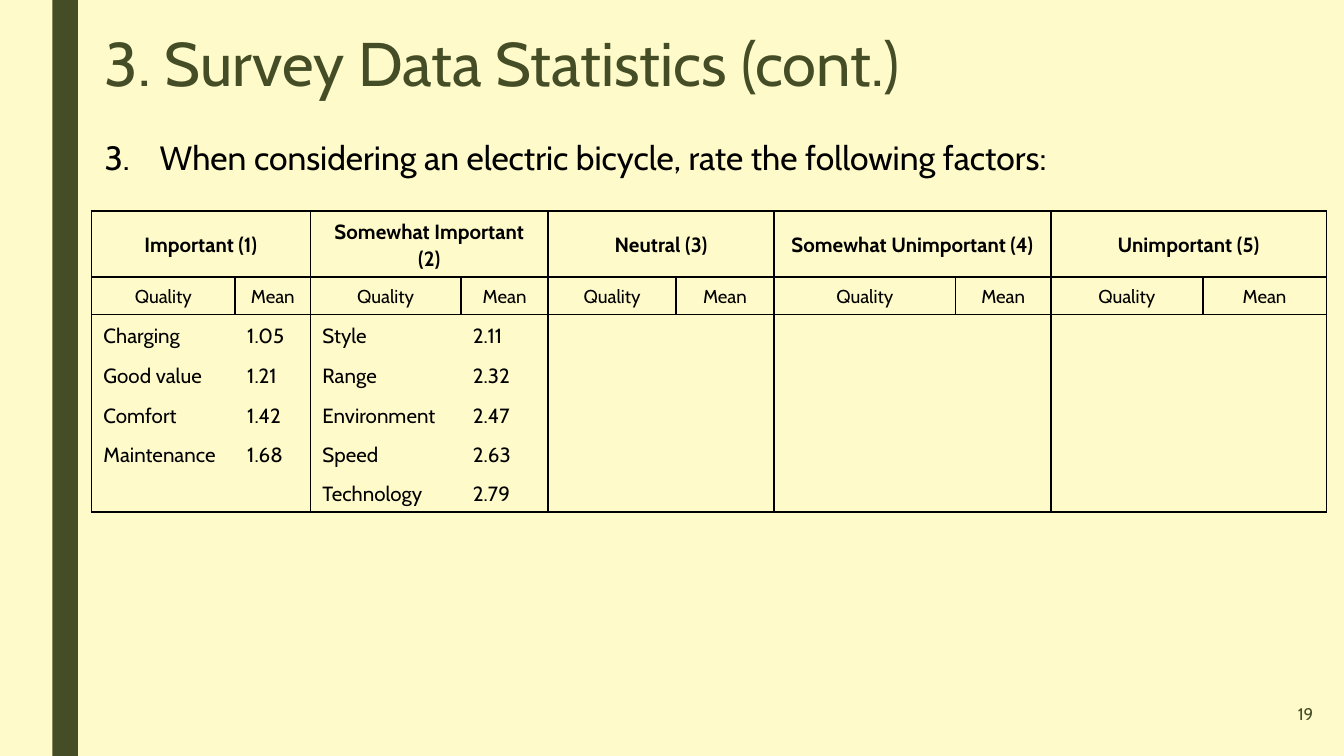
from lxml.etree import SubElement
from pptx import Presentation
from pptx.dml.color import RGBColor
from pptx.enum.shapes import MSO_SHAPE
from pptx.enum.text import MSO_ANCHOR, MSO_AUTO_SIZE, PP_ALIGN
from pptx.oxml import parse_xml
from pptx.oxml.ns import nsdecls, qn
from pptx.util import Inches, Pt

TITLE = "3. Survey Data Statistics (cont.)"
ASK = "3.\tWhen considering an electric bicycle, rate the following factors:"
PAGE = "19"
GROUPS = [
    ("Important (1)", [("Charging", "1.05"), ("Good value", "1.21"),
                       ("Comfort", "1.42"), ("Maintenance", "1.68")]),
    ("Somewhat Important (2)", [("Style", "2.11"), ("Range", "2.32"),
                                ("Environment", "2.47"), ("Speed", "2.63"),
                                ("Technology", "2.79")]),
    ("Neutral (3)", []),
    ("Somewhat Unimportant (4)", []),
    ("Unimportant (5)", []),
]
HEADS = ("Quality", "Mean")
COLS = [1.07, 0.56, 1.12, 0.65, 0.95, 0.73, 1.35, 0.71, 1.13, 0.92]
ROWS = [0.49, 0.27, 0.3, 0.3, 0.29, 0.29, 0.29]

FONT = "Cabin"
CREAM = RGBColor(0xFE, 0xFA, 0xC9)
GREEN = RGBColor(0x44, 0x4D, 0x26)
BLACK = RGBColor(0, 0, 0)
PLAIN = "{2D5ABB26-0587-4C30-8999-92F81FD0307C}"
WIDE = Inches(10)
HIGH = WIDE * 9 // 16


def write(frame, text, size, color=BLACK, bold=False, align=PP_ALIGN.LEFT,
          space=None, after=None):
    para = frame.paragraphs[0]
    para.alignment = align
    para.line_spacing = space
    para.space_after = after
    if not text:
        SubElement(para._p, qn("a:endParaRPr"), sz=str(size * 100))
        return para
    run = para.add_run()
    run.text = text
    font = run.font
    font.name, font.size, font.bold = FONT, Pt(size), bold
    font.color.rgb = color
    return para


def place(shape, left, top, width, height):
    shape.left, shape.top = Inches(left), Inches(top)
    shape.width, shape.height = Inches(width), Inches(height)


def add_box(slide, left, top, width, height):
    box = slide.shapes.add_textbox(*map(Inches, (left, top, width, height)))
    box.text_frame.word_wrap = True
    return box.text_frame


def edge(cell, sides):
    props = cell._tc.get_or_add_tcPr()
    solid = f'<a:solidFill><a:srgbClr val="{BLACK}"/></a:solidFill>'
    for i, side in enumerate("LRTB"):
        fill = solid if side in sides else "<a:noFill/>"
        props.insert(i, parse_xml(
            f'<a:ln{side} {nsdecls("a")} w="12700">{fill}</a:ln{side}>'))


def add_grid(slide):
    frame = slide.shapes.add_table(
        len(ROWS), len(COLS), Inches(0.68), Inches(1.57),
        Inches(sum(COLS)), Inches(sum(ROWS)))
    grid = frame.table
    grid.first_row = grid.horz_banding = False
    grid._tbl.tblPr.find(qn("a:tableStyleId")).text = PLAIN
    for col, width in zip(grid.columns, COLS):
        col.width = Inches(width)
    for row, height in zip(grid.rows, ROWS):
        row.height = Inches(height)
    last = len(ROWS) - 1
    for r in range(len(ROWS)):
        for c in range(len(COLS)):
            group, side = divmod(c, 2)
            name, items = GROUPS[group]
            cell = grid.cell(r, c)
            cell.fill.background()
            cell.margin_left = cell.margin_right = Inches(0.09)
            cell.margin_top = Inches(0.05)
            head = r < 2
            cell.margin_bottom = Inches(0.05 if head else 0.04)
            if r == 0:
                text = "" if side else name
            elif r == 1:
                text = HEADS[side]
            else:
                text = items[r - 2][side] if r - 2 < len(items) else ""
            cell.vertical_anchor = MSO_ANCHOR.MIDDLE if head else MSO_ANCHOR.TOP
            write(cell.text_frame, text, 10 if r == 1 else 11, bold=r == 0,
                  align=PP_ALIGN.CENTER if head else PP_ALIGN.LEFT,
                  space=1.07, after=Pt(8))
            sides = "LR" if head else "LR"[side]
            sides += "T" if r <= 2 else ""
            sides += "B" if head or r == last else ""
            edge(cell, sides)
    for c in range(0, len(COLS), 2):
        grid.cell(0, c).merge(grid.cell(0, c + 1))


def main():
    deck = Presentation()
    deck.slide_width, deck.slide_height = WIDE, HIGH
    slide = deck.slides.add_slide(deck.slide_layouts[5])
    slide.background.fill.solid()
    slide.background.fill.fore_color.rgb = CREAM

    bar = slide.shapes.add_shape(
        MSO_SHAPE.RECTANGLE, Inches(0.39), 0, Inches(0.19), HIGH)
    bar.shadow.inherit = False
    bar.fill.solid()
    bar.fill.fore_color.rgb = GREEN
    bar.line.fill.background()

    title = slide.shapes.title
    place(title, 0.68, 0.15, 9.32, 0.63)
    frame = title.text_frame
    frame.auto_size = MSO_AUTO_SIZE.NONE
    frame.vertical_anchor = MSO_ANCHOR.TOP
    frame.margin_left = frame.margin_right = Inches(0.1)
    frame.margin_top = frame.margin_bottom = Inches(0.1)
    write(frame, TITLE, 33, GREEN, space=0.89)

    para = write(add_box(slide, 0.68, 0.97, 8.88, 0.4), ASK, 18)
    props = para._p.get_or_add_pPr()
    props.set("marL", str(Inches(0.41)))
    props.set("indent", str(-Inches(0.41)))

    add_grid(slide)

    page = add_box(slide, 9.27, 5.1, 0.6, 0.43)
    page.vertical_anchor = MSO_ANCHOR.MIDDLE
    write(page, PAGE, 9, GREEN, align=PP_ALIGN.RIGHT)
    deck.save("out.pptx")


if __name__ == "__main__":
    main()
